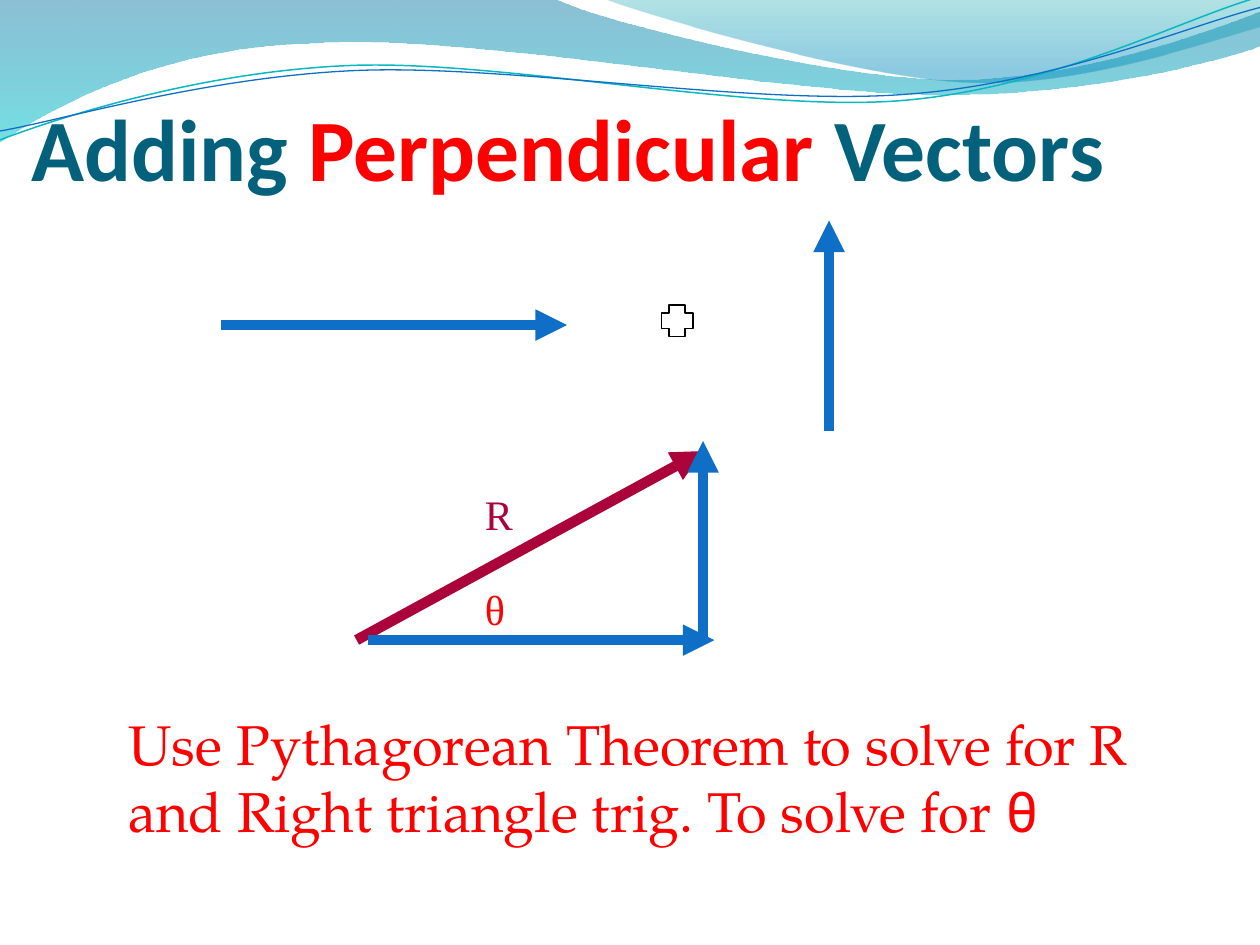
from math import cos, radians, sin

from lxml import etree
from pptx import Presentation
from pptx.dml.color import RGBColor
from pptx.enum.shapes import MSO_CONNECTOR, MSO_SHAPE
from pptx.enum.text import MSO_ANCHOR, MSO_AUTO_SIZE, PP_ALIGN
from pptx.oxml.ns import qn
from pptx.util import Inches, Pt

BLUE, CRIMSON, RED, TEAL = "0F6FC6", "AA043A", "FF0000", "04617B"
TILT = 2.7

LEFT_WAVE = [
    [(0, 0)], [(4.4, -0.01)],
    [(4.76, 0.17), (6.64, 0.63), (7.58, 0.63)],
    [(8.53, 0.63), (9.58, 0.26), (10, 0.09)],
    [(10.01, 0.36)],
    [(9.83, 0.44), (8.7, 0.76), (7.46, 0.75)],
    [(6.22, 0.75), (3.82, 0.28), (2.57, 0.34)],
    [(1.29, 0.36), (0.46, 0.83), (-0.01, 1.13)],
]
RIGHT_WAVE = [
    [(4.79, -0.01)],
    [(5.09, 0.11), (6.82, 0.62), (7.69, 0.65)],
    [(8.56, 0.69), (9.61, 0.32), (10, 0.21)],
    [(10, 0)],
]
TEAL_CURVE = [
    [(0, 1.11)],
    [(0.48, 0.93), (1.58, 0.57), (2.77, 0.52)],
    [(3.95, 0.47), (5.93, 0.89), (7.13, 0.8)],
    [(8.33, 0.71), (9.38, 0.15), (9.98, -0.02)],
]
BLUE_CURVE = [
    [(0, 1.04)],
    [(0.47, 0.96), (1.64, 0.61), (2.83, 0.56)],
    [(4.03, 0.51), (5.97, 0.84), (7.17, 0.75)],
    [(8.36, 0.67), (9.41, 0.21), (10, 0.06)],
]


def rgb(color):
    return RGBColor.from_string(color)


def turn(point, pivot, degrees):
    a = radians(degrees)
    dx, dy = point[0] - pivot[0], point[1] - pivot[1]
    return (pivot[0] + dx * cos(a) - dy * sin(a),
            pivot[1] + dx * sin(a) + dy * cos(a))


def add_outline(s, segments, close):
    start, *rest = [(Inches(x), Inches(y)) for seg in segments for x, y in seg]
    builder = s.shapes.build_freeform(*start)
    builder.add_line_segments(rest, close=close)
    sp = builder.convert_to_shape()
    sp.shadow.inherit = False
    lines = iter(list(sp.element.spPr.iter(qn("a:lnTo"))))
    for seg in segments[1:]:
        first, *others = [next(lines) for _ in seg]
        if others:
            curve = etree.Element(qn("a:cubicBezTo"))
            first.addprevious(curve)
            for line in (first, *others):
                curve.append(line[0])
                line.getparent().remove(line)
    return sp


def add_wave(s, segments, stops):
    sp = add_outline(s, segments, True)
    sp.line.fill.background()
    sp.fill.gradient()
    sp.fill.gradient_angle = 270
    for stop, (position, color, _) in zip(sp.fill.gradient_stops, stops):
        stop.position = position
        stop.color.rgb = rgb(color)
    for clr, (_, _, opacity) in zip(sp.element.spPr.iter(qn("a:srgbClr")), stops):
        etree.SubElement(clr, qn("a:alpha"), val=str(opacity * 1000))


def add_curve(s, segments, pivot, color, width):
    level = [[turn(pt, pivot, TILT) for pt in seg] for seg in segments]
    sp = add_outline(s, level, False)
    sp.rotation = 360 - TILT
    sp.fill.background()
    sp.line.color.rgb = rgb(color)
    sp.line.width = Pt(width)


def add_vector(s, x1, y1, x2, y2, color=BLUE):
    c = s.shapes.add_connector(MSO_CONNECTOR.STRAIGHT, Inches(x1), Inches(y1),
                               Inches(x2), Inches(y2))
    c.line.color.rgb = rgb(color)
    c.line.width = Pt(6)
    etree.SubElement(c.line._get_or_add_ln(), qn("a:tailEnd"), type="triangle")
    etree.SubElement(c.element.spPr, qn("a:effectLst"))


def add_plus(s, x, y, size):
    sp = s.shapes.add_shape(MSO_SHAPE.CROSS, Inches(x), Inches(y),
                            Inches(size), Inches(size))
    sp.shadow.inherit = False
    sp.adjustments[0] = 0.25
    sp.fill.solid()
    sp.fill.fore_color.rgb = rgb("FFFFFF")
    sp.line.color.rgb = rgb("000000")
    sp.line.width = Pt(1)


def set_title(s):
    sp = s.shapes.title
    sp.left, sp.top, sp.width, sp.height = map(Inches, (0.25, 0.33, 9.5, 1.25))
    tf = sp.text_frame
    tf.auto_size = MSO_AUTO_SIZE.NONE
    tf.vertical_anchor = MSO_ANCHOR.BOTTOM
    tf.margin_left = tf.margin_right = tf.margin_bottom = 0
    p = tf.paragraphs[0]
    p.alignment = PP_ALIGN.LEFT
    p.font.name, p.font.size, p.font.bold = "Calibri", Pt(50), True
    for text, color in (("Adding ", TEAL), ("Perpendicular", RED), (" Vectors", TEAL)):
        r = p.add_run()
        r.text = text
        r.font.color.rgb = rgb(color)


def add_text(s, box, runs, size, color, wrap=False):
    tf = s.shapes.add_textbox(*map(Inches, box)).text_frame
    tf.word_wrap = wrap
    tf.auto_size = MSO_AUTO_SIZE.SHAPE_TO_FIT_TEXT
    p = tf.paragraphs[0]
    p.font.size = Pt(size)
    p.font.color.rgb = rgb(color)
    for text, font in runs:
        r = p.add_run()
        r.text = text
        r.font.name = font


def main():
    prs = Presentation()
    prs.slide_width, prs.slide_height = Inches(10), Inches(7.5)
    s = prs.slides.add_slide(prs.slide_layouts[5])

    add_wave(s, LEFT_WAVE, [(0, "0074A1", 45), (1, "00C6CF", 55)])
    add_wave(s, RIGHT_WAVE, [(0, "00A1A9", 30), (0.8, "008BBF", 45)])
    add_curve(s, TEAL_CURVE, (4.99, 0.57), "0AB8BF", 0.85)
    add_curve(s, BLUE_CURVE, (5, 0.59), BLUE, 0.75)
    set_title(s)

    add_vector(s, 1.75, 2.58, 4.5, 2.58)
    add_vector(s, 6.58, 3.42, 6.58, 1.75)
    add_vector(s, 2.83, 5.08, 5.58, 3.58, CRIMSON)
    add_plus(s, 5.25, 2.42, 0.25)
    add_vector(s, 2.92, 5.08, 5.67, 5.08)
    add_vector(s, 5.58, 5.08, 5.58, 3.5)

    add_text(s, (0.92, 5.58, 8.67, 1.18),
             [("Use Pythagorean Theorem to solve for R and Right triangle trig. "
               "To solve for ", "TeX Gyre Pagella"), ("θ", "Roboto")],
             32, RED, wrap=True)
    add_text(s, (3.75, 3.83, 0.42, 0.5), [("R", "Times New Roman")], 24, CRIMSON)
    add_text(s, (3.75, 4.58, 0.36, 0.5), [("θ", "Times New Roman")], 24, RED)

    prs.save("out.pptx")


if __name__ == "__main__":
    main()
